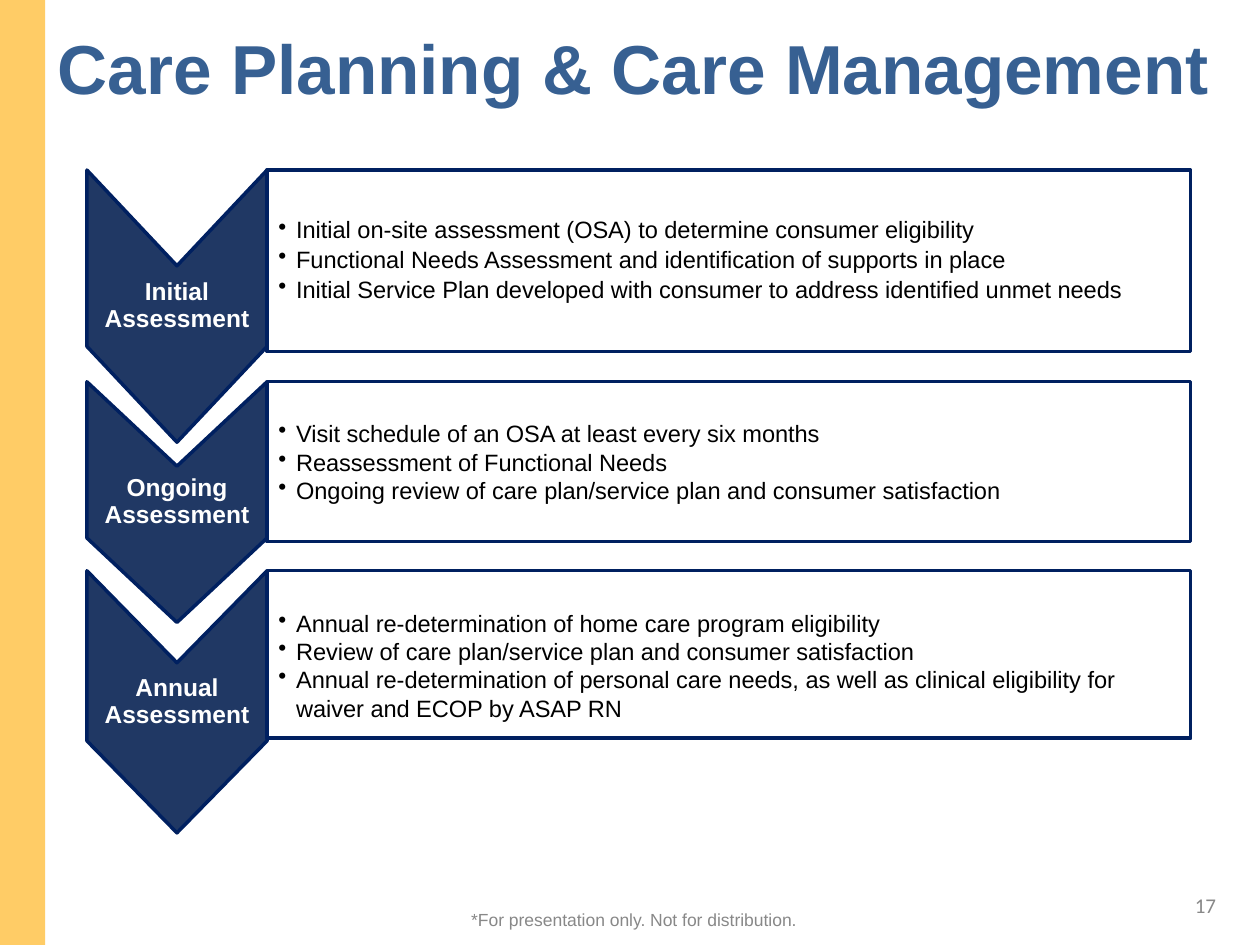
import pptx
import pptx.util
import pptx.dml.color
import pptx.enum.shapes
import pptx.enum.text
import pptx.oxml.ns
import lxml.etree
from dataclasses import dataclass

Inches = pptx.util.Inches
Pt = pptx.util.Pt
ALIGN = pptx.enum.text.PP_ALIGN
RECT = pptx.enum.shapes.MSO_SHAPE.RECTANGLE


@dataclass(frozen=True)
class Theme:
    title: str = "376092"
    navy: str = "203864"
    edge: str = "002060"
    gold: str = "FFCC66"
    grey: str = "888888"
    white: str = "FFFFFF"
    black: str = "000000"
    head: float = 39.6
    label: float = 14
    body: float = 13.5
    page: float = 12
    note: float = 10


theme = Theme()


def rgb(code):
    return pptx.dml.color.RGBColor.from_string(code)


def write(shape, lines, size, color, align, pads, bold=False, face="Arial"):
    """Fill a shape with paragraphs; pads are left, top, right, bottom."""
    frame = shape.text_frame
    frame.text = "\n".join(lines)
    frame.word_wrap = True
    frame.auto_size = pptx.enum.text.MSO_AUTO_SIZE.NONE
    frame.vertical_anchor = pptx.enum.text.MSO_ANCHOR.MIDDLE
    (frame.margin_left, frame.margin_top,
     frame.margin_right, frame.margin_bottom) = map(Inches, pads)
    for para in frame.paragraphs:
        para.alignment = align
        para.font.name = face
        para.font.size = Pt(size)
        para.font.bold = bold
        para.font.color.rgb = rgb(color)
    return frame.paragraphs


deck = pptx.Presentation()
deck.slide_width, deck.slide_height = Inches(10), Inches(7.5)
slide = deck.slides.add_slide(deck.slide_layouts[5])
shapes = slide.shapes
pads = (0.1, 0.05, 0.1, 0.05)

# Title
title = shapes.title
title.left, title.top = Inches(0.36), Inches(0.07)
title.width, title.height = Inches(9.64), Inches(0.92)
write(title, ["Care Planning & Care Management"], theme.head, theme.title,
      ALIGN.LEFT, pads, bold=True)

# Stages: label, top, chevron height, notch depth, box height,
# top padding, line spacing, space after, bullets
stages = [
    ("Initial Assessment", 1.35, 2.16, 0.76, 1.44, 0.06, 0.9, 2.5, [
        "Initial on-site assessment (OSA) to determine consumer eligibility",
        "Functional Needs Assessment and identification of supports in place",
        "Initial Service Plan developed with consumer to address identified unmet needs"]),
    ("Ongoing Assessment", 3.03, 1.91, 0.67, 1.27, 0.06, 1.0, 0, [
        "Visit schedule of an OSA at least every six months",
        "Reassessment of Functional Needs",
        "Ongoing review of care plan/service plan and consumer satisfaction"]),
    ("Annual Assessment", 4.53, 2.08, 0.73, 1.33, 0.23, 1.0, 0, [
        "Annual re-determination of home care program eligibility",
        "Review of care plan/service plan and consumer satisfaction",
        "Annual re-determination of personal care needs, as well as clinical "
        "eligibility for waiver and ECOP by ASAP RN"]),
]
left, wide = 0.69, 1.43
mid, right = left + wide / 2, left + wide

for label, top, tall, notch, high, pad, gap, after, points in stages:
    # Chevron
    base = top + tall
    pen = shapes.build_freeform(Inches(right), Inches(top))
    pen.add_line_segments([(Inches(x), Inches(y)) for x, y in (
        (right, base - notch), (mid, base), (left, base - notch),
        (left, top), (mid, top + notch))], close=True)
    arrow = pen.convert_to_shape()
    arrow.fill.solid()
    arrow.fill.fore_color.rgb = rgb(theme.navy)
    para, = write(arrow, [label], theme.label, theme.white, ALIGN.CENTER,
                  (0.01, 0.53, 0.01, 0.53), bold=True)
    para.line_spacing = 0.9

    # Box with bullets
    box = shapes.add_shape(RECT, Inches(right), Inches(top),
                           Inches(7.33), Inches(high))
    box.fill.background()
    for para in write(box, points, theme.body, theme.black, ALIGN.LEFT,
                      (0.09, pad, 0.06, 0.06)):
        para.line_spacing = gap
        para.space_after = Pt(after)
        props = para._p.get_or_add_pPr()
        props.set("marL", str(Inches(0.14)))
        props.set("indent", str(-Inches(0.14)))
        mark = lxml.etree.Element(pptx.oxml.ns.qn("a:buChar"), char="•")
        props.find(pptx.oxml.ns.qn("a:defRPr")).addprevious(mark)

    for shape in (arrow, box):
        shape.shadow.inherit = False
        shape.line.color.rgb = rgb(theme.edge)
        shape.line.width = Pt(2)

# Side bar
bar = shapes.add_shape(RECT, 0, 0, Inches(0.36), deck.slide_height)
bar.shadow.inherit = False
bar.fill.solid()
bar.fill.fore_color.rgb = rgb(theme.gold)
bar.line.fill.background()

# Page number and footer
page = shapes.add_textbox(Inches(8.08), Inches(7.01), Inches(1.67), Inches(0.34))
write(page, ["17"], theme.page, theme.grey, ALIGN.RIGHT, pads, face="Calibri")
note = shapes.add_textbox(Inches(3.34), Inches(7.1), Inches(3.38), Inches(0.4))
write(note, ["*For presentation only. Not for distribution."], theme.note,
      theme.grey, ALIGN.CENTER, pads)

deck.save("out.pptx")
